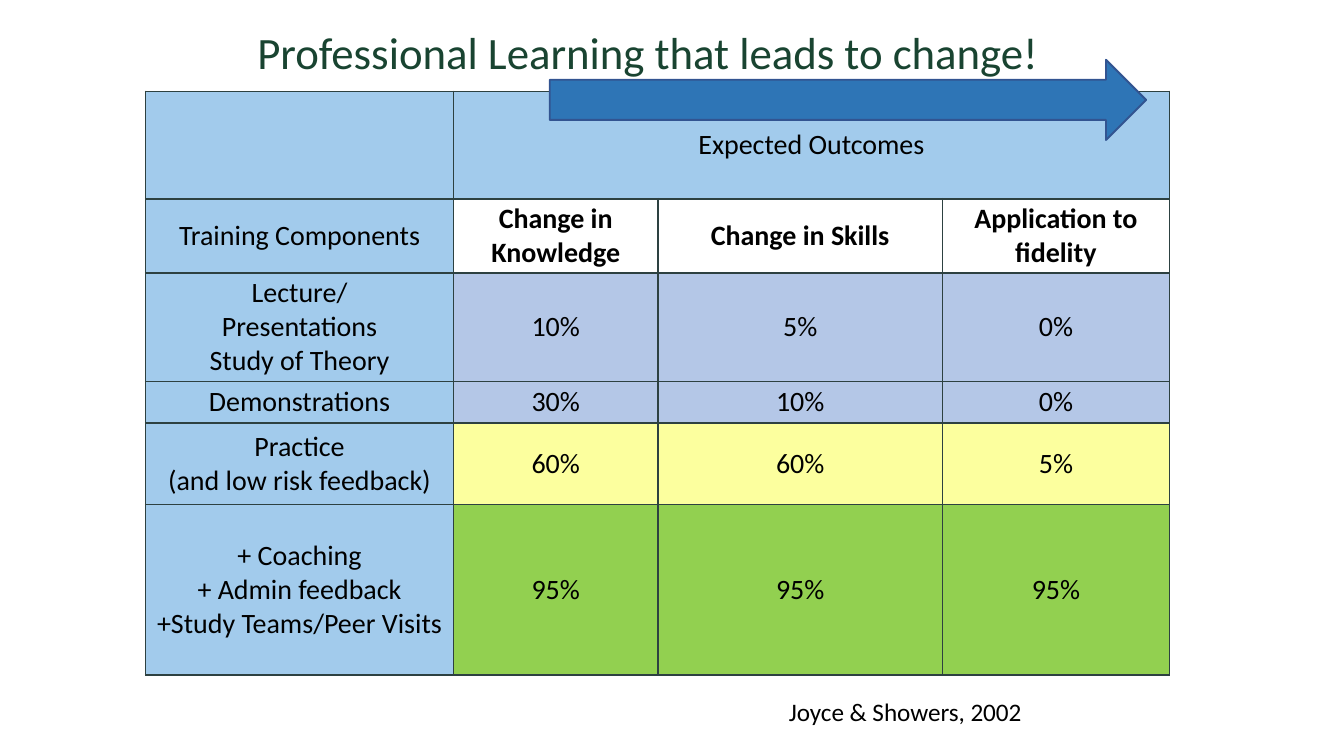
import pptx
import pptx.dml.color
import pptx.enum.shapes
import pptx.enum.text
import pptx.oxml
import pptx.oxml.ns
import pptx.util

Pt = pptx.util.Pt
ALIGN = pptx.enum.text.PP_ALIGN
FONT = "Calibri"
COLORS = {
    "title": "194431", "text": "000000", "border": "2D4141",
    "label": "A2CBEC", "low": "B4C7E7", "medium": "FCFF9E", "high": "92D050",
    "arrow": "2E75B6", "arrow_line": "325491",
}
COLUMN_WIDTHS = [165, 109.5, 152.5, 121.5]
# Height, fill of the outcome cells, label lines, outcomes
ROWS = [
    (57.5, "label", [], ["Expected Outcomes"]),
    (39.5, None, ["Training Components"],
     ["Change in Knowledge", "Change in Skills", "Application to fidelity"]),
    (57.5, "low", ["Lecture/", "Presentations", "Study of Theory"],
     ["10%", "5%", "0%"]),
    (22.5, "low", ["Demonstrations"], ["30%", "10%", "0%"]),
    (43.5, "medium", ["Practice", "(and low risk feedback)"],
     ["60%", "60%", "5%"]),
    (91.5, "high",
     ["+ Coaching", "+ Admin feedback", "+Study Teams/Peer Visits"],
     ["95%", "95%", "95%"]),
]


def color(name):
    return pptx.dml.color.RGBColor.from_string(COLORS[name])


def write_lines(frame, lines, size, color_name="text", bold=False,
                align=ALIGN.CENTER):
    for index, line in enumerate(lines):
        para = frame.add_paragraph() if index else frame.paragraphs[0]
        para.alignment = align
        span = para.add_run()
        span.text = line
        span.font.color.rgb = color(color_name)
        formats = {"name": FONT, "size": Pt(size), "bold": bold}
        for name, value in formats.items():
            setattr(span.font, name, value)


def add_text(page, box, line, size, color_name, align):
    frame = page.shapes.add_textbox(*map(Pt, box)).text_frame
    frame.word_wrap = True
    write_lines(frame, [line], size, color_name, align=align)


def outline_cell(cell):
    properties = cell._tc.get_or_add_tcPr()
    for index, side in enumerate(("lnL", "lnR", "lnT", "lnB")):
        line = pptx.oxml.parse_xml(
            f'<a:{side} {pptx.oxml.ns.nsdecls("a")} w="{Pt(1)}"><a:solidFill>'
            f'<a:srgbClr val="{COLORS["border"]}"/></a:solidFill></a:{side}>')
        properties.insert(index, line)


def format_cell(cell, lines, fill, bold):
    margins = ("margin_left", "margin_right", "margin_top", "margin_bottom")
    formats = dict.fromkeys(margins, Pt(1.5))
    formats["vertical_anchor"] = pptx.enum.text.MSO_ANCHOR.MIDDLE
    for name, value in formats.items():
        setattr(cell, name, value)
    if fill:
        cell.fill.solid()
        cell.fill.fore_color.rgb = color(fill)
    else:
        cell.fill.background()
    outline_cell(cell)
    write_lines(cell.text_frame, lines, 15, bold=bold)


def add_outcomes_table(page, box):
    table = page.shapes.add_table(
        len(ROWS), len(COLUMN_WIDTHS), *map(Pt, box)).table
    table.first_row = table.horz_banding = False
    for column, width in zip(table.columns, COLUMN_WIDTHS):
        column.width = Pt(width)
    table.cell(0, 1).merge(table.cell(0, 3))
    for index, (height, fill, label, outcomes) in enumerate(ROWS):
        table.rows[index].height = Pt(height)
        format_cell(table.cell(index, 0), label, "label", False)
        for column in range(1, len(COLUMN_WIDTHS)):
            lines = outcomes[column - 1:column]
            format_cell(table.cell(index, column), lines, fill, fill is None)


def add_arrow(page, box):
    arrow = page.shapes.add_shape(
        pptx.enum.shapes.MSO_SHAPE.RIGHT_ARROW, *map(Pt, box))
    arrow.shadow.inherit = False
    arrow.fill.solid()
    arrow.fill.fore_color.rgb = color("arrow")
    arrow.line.color.rgb = color("arrow_line")
    arrow.line.width = Pt(1)


def main():
    deck = pptx.Presentation()
    deck.slide_width, deck.slide_height = Pt(720), Pt(405)
    page = deck.slides.add_slide(deck.slide_layouts[6])
    add_outcomes_table(page, (78, 49, 548.5, 312))
    add_text(page, (107.5, 9.5, 484.5, 36),
             "Professional Learning that leads to change! ", 24, "title",
             ALIGN.CENTER)
    add_text(page, (415.5, 369.5, 170, 24), "Joyce & Showers, 2002", 13.5,
             "text", ALIGN.LEFT)
    add_arrow(page, (294.5, 32, 319.5, 43))
    deck.save("out.pptx")


if __name__ == "__main__":
    main()
